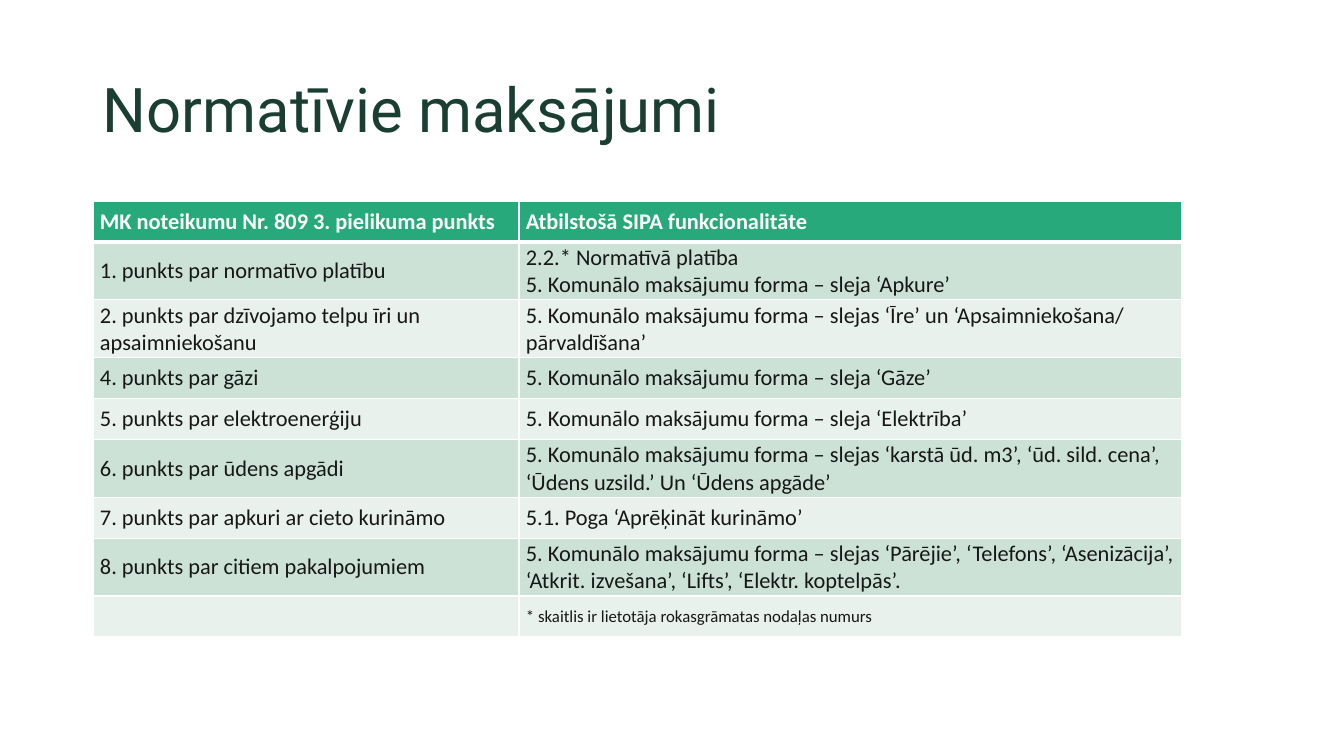
from pptx import Presentation
from pptx.dml.color import RGBColor
from pptx.enum.text import MSO_ANCHOR
from pptx.oxml import parse_xml
from pptx.oxml.ns import nsdecls
from pptx.util import Emu, Pt

MIDDLE = MSO_ANCHOR.MIDDLE
WHITE, GREEN, DARK, INK = "FFFFFF", "28A97C", "1B3E32", "171717"
BANDS = ["CDE2D7", "E8F1EC"]


def px(n):
    return Emu(round(n * 914400 / 100.8))


def write(frame, text, size=16, font="Calibri", color=INK, bold=False, space=1.0):
    frame.word_wrap = True
    for i, line in enumerate(text.split("\n")):
        para = frame.paragraphs[0] if i == 0 else frame.add_paragraph()
        para.line_spacing = space
        run = para.add_run()
        run.text = line
        run.font.size = Pt(size)
        run.font.name = font
        run.font.bold = bold
        run.font.color.rgb = RGBColor.from_string(color)


deck = Presentation()
deck.slide_width, deck.slide_height = px(1344), px(756)
slide = deck.slides.add_slide(deck.slide_layouts[6])

# Title
title = slide.shapes.add_textbox(px(93), px(40), px(1159), px(146)).text_frame
title.vertical_anchor = MIDDLE
write(title, "Normatīvie maksājumi", size=44, font="Roboto", color=DARK, space=0.9)

# Table content
FORM = "5. Komunālo maksājumu forma – "
rows = [
    ("MK noteikumu Nr. 809 3. pielikuma punkts", "Atbilstošā SIPA funkcionalitāte"),
    ("1. punkts par normatīvo platību",
     "2.2.* Normatīvā platība\n" + FORM + "sleja ‘Apkure’"),
    ("2. punkts par dzīvojamo telpu īri un apsaimniekošanu",
     FORM + "slejas ‘Īre’ un ‘Apsaimniekošana/ pārvaldīšana’"),
    ("4. punkts par gāzi", FORM + "sleja ‘Gāze’"),
    ("5. punkts par elektroenerģiju", FORM + "sleja ‘Elektrība’"),
    ("6. punkts par ūdens apgādi",
     FORM + "slejas ‘karstā ūd. m3’, ‘ūd. sild. cena’, ‘Ūdens uzsild.’ Un ‘Ūdens apgāde’"),
    ("7. punkts par apkuri ar cieto kurināmo", "5.1. Poga ‘Aprēķināt kurināmo’"),
    ("8. punkts par citiem pakalpojumiem",
     FORM + "slejas ‘Pārējie’, ‘Telefons’, ‘Asenizācija’, ‘Atkrit. izvešana’, "
     "‘Lifts’, ‘Elektr. koptelpās’."),
    ("", "* skaitlis ir lietotāja rokasgrāmatas nodaļas numurs"),
]

# Table grid
widths, height = [426, 663], 41
table = slide.shapes.add_table(len(rows), len(widths), px(93), px(201),
                               px(sum(widths)), px(height * len(rows))).table
for col, width in zip(table.columns, widths):
    col.width = px(width)

# Cells: thick rule under the header, thin rules elsewhere
for r, texts in enumerate(rows):
    table.rows[r].height = px(height)
    head = r == 0
    for c, text in enumerate(texts):
        cell = table.cell(r, c)
        cell.vertical_anchor = MIDDLE
        cell.margin_left = cell.margin_right = px(7)
        cell.margin_top = cell.margin_bottom = px(2)
        for side in "LRTB":
            thick = (r, side) in [(0, "B"), (1, "T")]
            cell._tc.get_or_add_tcPr().append(parse_xml(
                f'<a:ln{side} {nsdecls("a")} w="{Pt(3 if thick else 1)}"><a:solidFill>'
                f'<a:srgbClr val="{WHITE}"/></a:solidFill></a:ln{side}>'))
        cell.fill.solid()
        cell.fill.fore_color.rgb = RGBColor.from_string(GREEN if head else BANDS[(r - 1) % 2])
        if text:
            write(cell.text_frame, text, size=12 if text.startswith("*") else 16,
                  color=WHITE if head else INK, bold=head)

deck.save("out.pptx")
